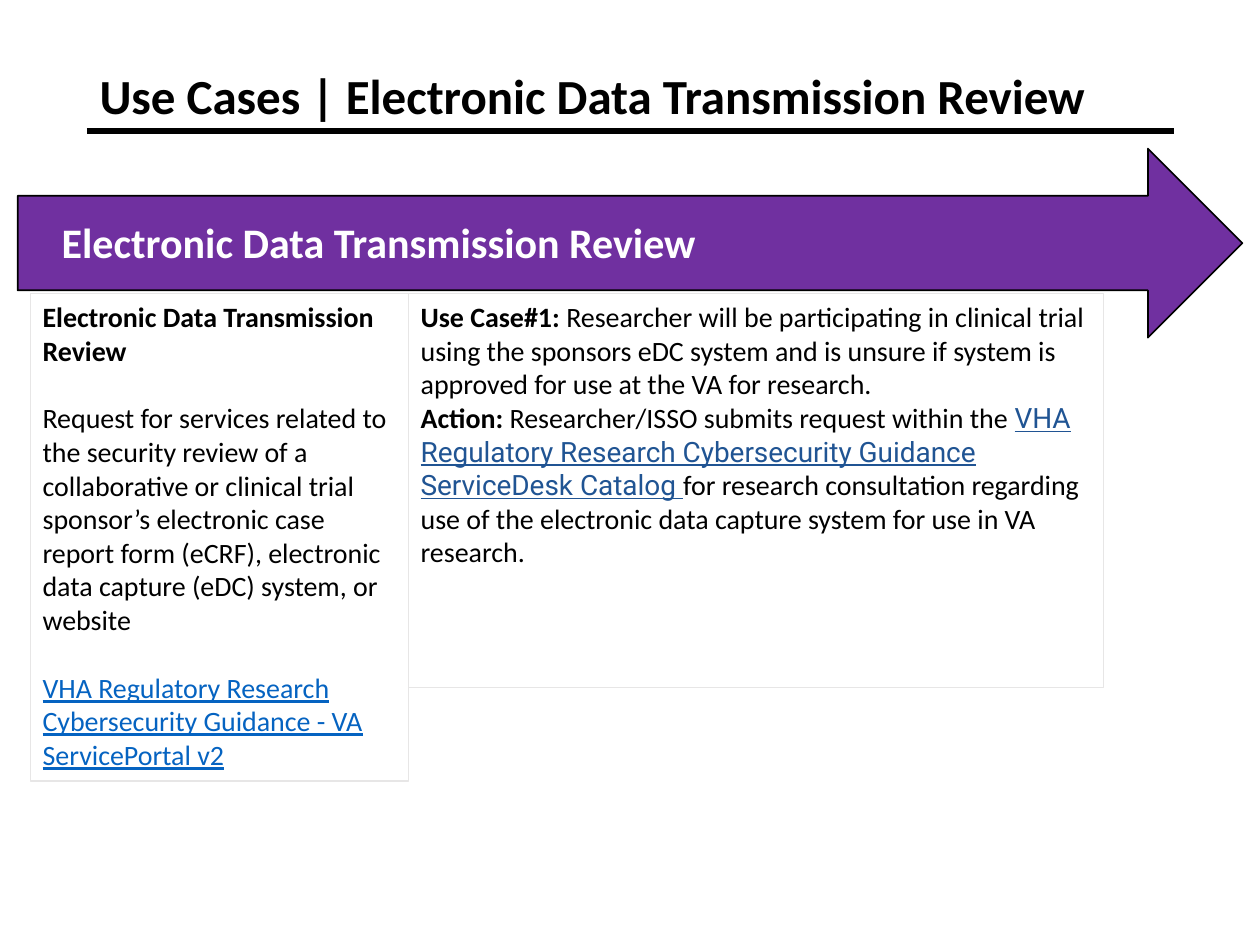
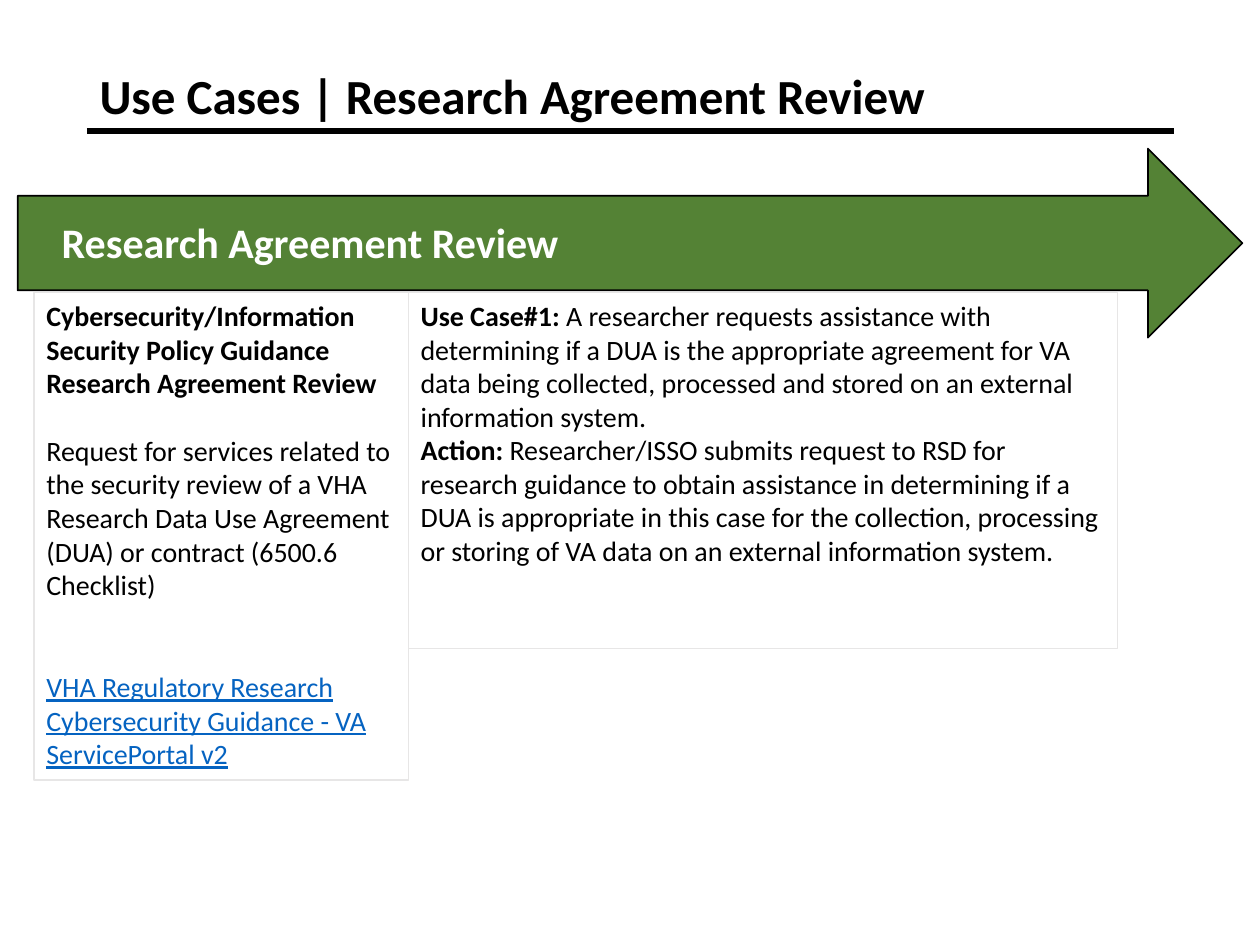
from lxml.etree import SubElement
from pptx import Presentation
from pptx.dml.color import RGBColor
from pptx.enum.shapes import MSO_CONNECTOR, MSO_SHAPE
from pptx.enum.text import MSO_ANCHOR, MSO_AUTO_SIZE, PP_ALIGN
from pptx.oxml.ns import qn
from pptx.util import Inches, Pt

# Grid: 100 columns by 75 rows of equal size
SLIDE_WIDTH, SLIDE_HEIGHT = Inches(10), Inches(7.5)
COLUMN, ROW = SLIDE_WIDTH / 100, SLIDE_HEIGHT / 75

BLACK = RGBColor(0x00, 0x00, 0x00)
WHITE = RGBColor(0xFF, 0xFF, 0xFF)
PURPLE = RGBColor(0x70, 0x30, 0xA0)
GREEN = RGBColor(0x54, 0x82, 0x35)
PALE_GREY = RGBColor(0xE7, 0xE6, 0xE6)
LINK_BLUE = RGBColor(0x05, 0x63, 0xC1)
CATALOG_BLUE = RGBColor(0x20, 0x54, 0x93)

# Text formats
BODY = {"name": "Calibri", "size": Pt(16), "bold": False, "color": BLACK}
STRONG = {**BODY, "bold": True}
LINK = {**BODY, "underline": True, "color": LINK_BLUE}
CATALOG_LINK = {**LINK, "name": "Roboto", "color": CATALOG_BLUE}
TITLE = {**STRONG, "size": Pt(28)}
BANNER = {**STRONG, "size": Pt(24), "color": WHITE}

BODY_LINE = 19.5  # height of one body line in points
DIVIDE = 32.4     # column where the two panels meet
PORTAL_LINK = "VHA Regulatory Research Cybersecurity Guidance - VA ServicePortal v2"

# Each paragraph is (lines of space before, [(text, format), ...])
REVIEWS = [
    {
        "name": "Electronic Data Transmission Review",
        "color": PURPLE,
        "top": 23.3,
        "service_left": 2.4,
        "case_size": (55.2, 31.3),
        "service": [
            (0, [("Electronic Data Transmission Review", STRONG)]),
            (1, [("Request for services related to the security review of a "
                  "collaborative or clinical trial sponsor’s electronic case report "
                  "form (eCRF), electronic data capture (eDC) system, or website", BODY)]),
            (1, [(PORTAL_LINK, LINK)]),
        ],
        "case": [
            (0, [("Use Case#1: ", STRONG),
                 ("Researcher will be participating in clinical trial using the sponsors "
                  "eDC system and is unsure if system is approved for use at the VA for "
                  "research.", BODY)]),
            (0, [("Action: ", STRONG),
                 ("Researcher/ISSO submits request within the ", BODY),
                 ("VHA Regulatory Research Cybersecurity Guidance ServiceDesk Catalog ",
                  CATALOG_LINK),
                 ("for research consultation regarding use of the electronic data capture "
                  "system for use in VA research.", BODY)]),
        ],
    },
    {
        "name": "Research Agreement Review",
        "color": GREEN,
        "top": 23.2,
        "service_left": 2.7,
        "case_size": (56.3, 28.3),
        "service": [
            (0, [("Cybersecurity/Information Security Policy Guidance", STRONG)]),
            (0, [("Research Agreement Review", STRONG)]),
            (1, [("Request for services related to the security review of a VHA Research "
                  "Data Use Agreement (DUA) or contract (6500.6 Checklist)", BODY)]),
            (2, [(PORTAL_LINK, LINK)]),
        ],
        "case": [
            (0, [("Use Case#1: ", STRONG),
                 ("A researcher requests assistance with determining if a DUA is the "
                  "appropriate agreement for VA data being collected, processed and stored "
                  "on an external information system.", BODY)]),
            (0, [("Action: ", STRONG),
                 ("Researcher/ISSO submits request to RSD for research guidance to obtain "
                  "assistance in determining if a DUA is appropriate in this case for the "
                  "collection, processing or storing of VA data on an external information "
                  "system.", BODY)]),
        ],
    },
]


def grid(left, top, width, height):
    """Turn columns and rows into slide lengths."""
    return [round(n * unit) for n, unit in
            zip((left, top, width, height), (COLUMN, ROW, COLUMN, ROW))]


def set_format(font, text_format):
    for key, value in text_format.items():
        if key == "color":
            font.color.rgb = value
        else:
            setattr(font, key, value)


def write(frame, paragraphs, anchor=MSO_ANCHOR.TOP):
    frame.word_wrap = True
    frame.auto_size = MSO_AUTO_SIZE.NONE
    frame.vertical_anchor = anchor
    for index, (gap, runs) in enumerate(paragraphs):
        paragraph = frame.add_paragraph() if index else frame.paragraphs[0]
        paragraph.alignment = PP_ALIGN.LEFT
        if gap:
            paragraph.space_before = Pt(gap * BODY_LINE)
        for text, text_format in runs:
            run = paragraph.add_run()
            run.text = text
            set_format(run.font, text_format)


def add_heading(slide, text):
    """Title with the heavy rule beneath it."""
    rule_left, rule_top, rule_width, _ = grid(6.9, 10.4, 86.3, 0)
    rule = slide.shapes.add_connector(MSO_CONNECTOR.STRAIGHT, rule_left, rule_top,
                                      rule_left + rule_width, rule_top)
    rule.line.color.rgb = BLACK
    rule.line.width = Pt(3)
    SubElement(rule.line._ln.getparent(), qn("a:effectLst"))

    title = slide.shapes.title
    title.left, title.top, title.width, title.height = grid(6.9, 4.1, 92.1, 7.5)
    write(title.text_frame, [(0, [(text, TITLE)])], MSO_ANCHOR.MIDDLE)
    title.text_frame.paragraphs[0].line_spacing = 0.9


def add_outlined(slide, preset, place, line_color, line_width, fill=None):
    shape = slide.shapes.add_shape(preset, *grid(*place))
    shape.shadow.inherit = False
    if fill is None:
        shape.fill.background()
    else:
        shape.fill.solid()
        shape.fill.fore_color.rgb = fill
    shape.line.color.rgb = line_color
    shape.line.width = Pt(line_width)
    return shape


def add_banner(slide, text, color):
    """Full-width arrow with its caption."""
    add_outlined(slide, MSO_SHAPE.RIGHT_ARROW, (1.4, 11.8, 97.2, 15), BLACK, 1, color)
    caption = slide.shapes.add_textbox(*grid(4.9, 15.4, 85.6, 7.5)).text_frame
    caption.margin_left = caption.margin_right = 0
    caption.margin_top = caption.margin_bottom = Inches(0.21)
    write(caption, [(0, [(text, BANNER)])], MSO_ANCHOR.MIDDLE)


def add_panel(slide, place, paragraphs):
    panel = add_outlined(slide, MSO_SHAPE.RECTANGLE, place, PALE_GREY, 0.75)
    write(panel.text_frame, paragraphs)


def add_review(deck, review):
    slide = deck.slides.add_slide(deck.slide_layouts[5])
    add_heading(slide, f"Use Cases | {review['name']}")
    add_banner(slide, review["name"], review["color"])
    top, left = review["top"], review["service_left"]
    add_panel(slide, (DIVIDE, top, *review["case_size"]), review["case"])
    add_panel(slide, (left, top, DIVIDE - left, 38.7), review["service"])


def main():
    deck = Presentation()
    deck.slide_width, deck.slide_height = SLIDE_WIDTH, SLIDE_HEIGHT
    for review in REVIEWS:
        add_review(deck, review)
    deck.save("out.pptx")


if __name__ == "__main__":
    main()
